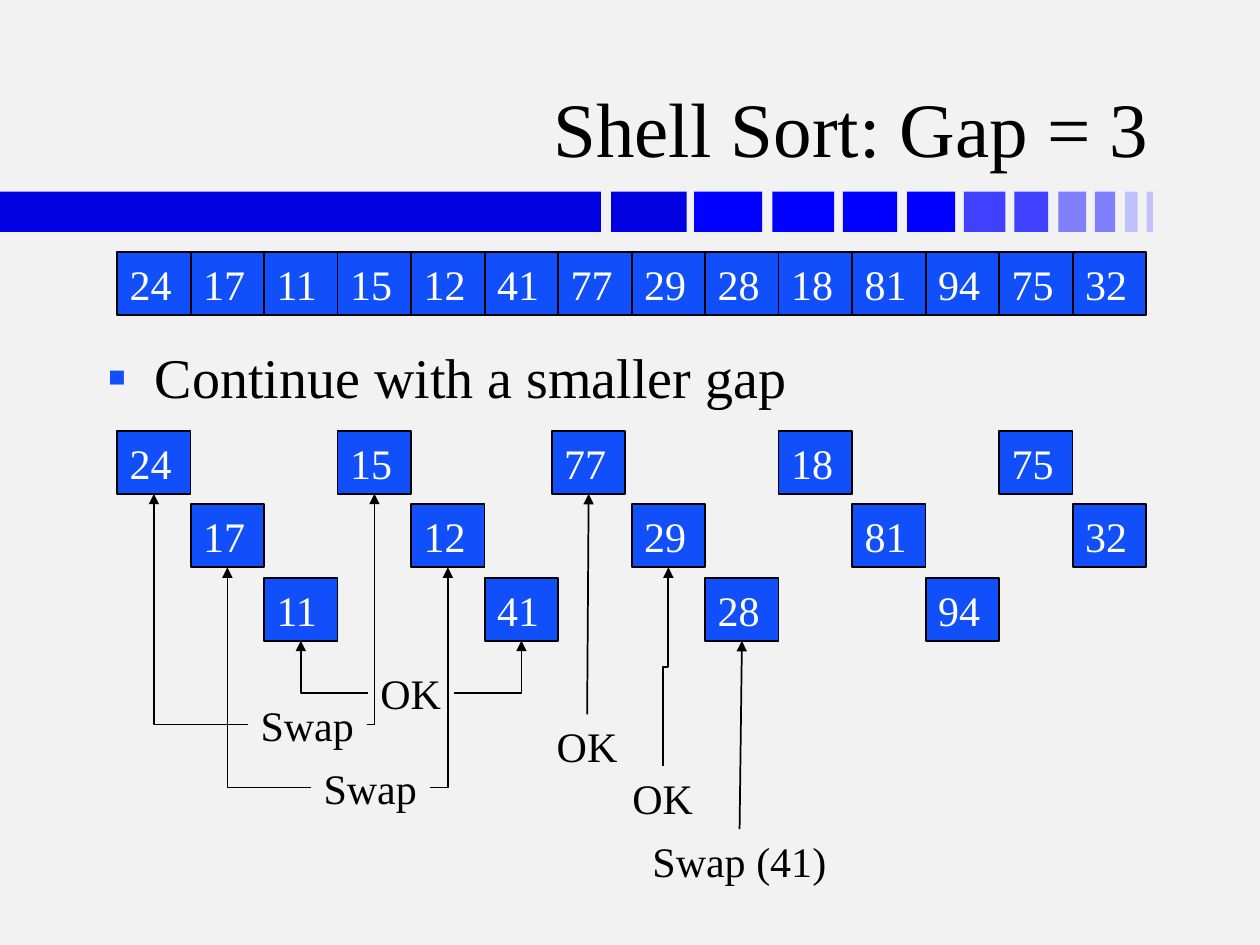
"""Build the Shell Sort slide for the pass with a gap of 3."""
from lxml.etree import SubElement
from pptx import Presentation
from pptx.dml.color import RGBColor
from pptx.enum.shapes import MSO_CONNECTOR as LINK, MSO_SHAPE
from pptx.enum.text import MSO_ANCHOR, MSO_AUTO_SIZE, PP_ALIGN
from pptx.oxml.ns import qn
from pptx.util import Inches, Pt

TITLE = "Shell Sort: Gap = 3"
POINT = "Continue with a smaller gap"
VALUES = [24, 17, 11, 15, 12, 41, 77, 29, 28, 18, 81, 94, 75, 32]
GAP = 3
NUDGES = {77: -0.05}
PAIR_LABELS = [
    ("Swap", 1.97, 5.5, 0.94, 24, 15),
    ("Swap", 2.47, 6, 0.94, 17, 12),
    ("OK", 2.92, 5.25, 0.68, 11, 41),
]
SINGLE_LABELS = [
    ("OK", 4.32, 5.67, 0.68, 77),
    ("OK", 4.92, 6.08, 0.68, 29),
    ("Swap (41)", 5.08, 6.58, 1.58, 28),
]

FONT = "Times New Roman"
BLACK = RGBColor(0x00, 0x00, 0x00)
WHITE = RGBColor(0xFF, 0xFF, 0xFF)
PAPER = RGBColor(0xF2, 0xF2, 0xF2)
CELL_BLUE = RGBColor(0x11, 0x4F, 0xFB)
NAVY = RGBColor(0x00, 0x00, 0xE0)
BLUE = RGBColor(0x00, 0x00, 0xFF)
MID_BLUE = RGBColor(0x40, 0x40, 0xFF)
SOFT_BLUE = RGBColor(0x80, 0x80, 0xFF)
PALE_BLUE = RGBColor(0xC0, 0xC0, 0xFF)
BAND = [
    (0, 4.77, NAVY), (4.85, 0.6, NAVY), (5.51, 0.54, BLUE), (6.13, 0.49, BLUE),
    (6.69, 0.43, BLUE), (7.2, 0.38, BLUE), (7.65, 0.33, MID_BLUE),
    (8.05, 0.27, MID_BLUE), (8.4, 0.22, SOFT_BLUE), (8.69, 0.16, SOFT_BLUE),
    (8.93, 0.1, PALE_BLUE), (9.1, 0.05, PALE_BLUE),
]
BAND_TOP, BAND_HEIGHT = 1.52, 0.32
ARRAY_LEFT, ARRAY_TOP, GROUPS_TOP = 0.93, 2, 3.42
PITCH, CELL_HEIGHT = 7 / 12, 0.5


def write(shape, text, size, color, align=PP_ALIGN.LEFT):
    shape.text_frame.text = text
    paragraph = shape.text_frame.paragraphs[0]
    paragraph.alignment = align
    font = paragraph.runs[0].font
    font.name, font.size, font.color.rgb = FONT, Pt(size), color
    return paragraph


def place(shape, left, top, width, height):
    shape.left, shape.top = Inches(left), Inches(top)
    shape.width, shape.height = Inches(width), Inches(height)


def add_block(slide, left, top, width, height, color):
    block = slide.shapes.add_shape(
        MSO_SHAPE.RECTANGLE, Inches(left), Inches(top), Inches(width), Inches(height))
    block.shadow.inherit = False
    block.fill.solid()
    block.fill.fore_color.rgb = color
    block.line.fill.background()
    return block


def add_cell(slide, value, left, top):
    cell = add_block(slide, left, top, PITCH, CELL_HEIGHT, CELL_BLUE)
    cell.line.color.rgb, cell.line.width = BLACK, Pt(1)
    cell.text_frame.word_wrap = False
    cell.text_frame.vertical_anchor = MSO_ANCHOR.MIDDLE
    write(cell, str(value), 24, WHITE)
    return cell


def add_label(slide, text, left, top, width):
    label = slide.shapes.add_textbox(
        Inches(left), Inches(top), Inches(width), Inches(CELL_HEIGHT))
    label.text_frame.word_wrap = False
    label.text_frame.auto_size = MSO_AUTO_SIZE.SHAPE_TO_FIT_TEXT
    write(label, text, 24, BLACK)
    return label


def add_arrow(slide, kind, begin, end):
    arrow = slide.shapes.add_connector(kind, *begin, *end)
    arrow.line.color.rgb, arrow.line.width = BLACK, Pt(1)
    SubElement(arrow.line._get_or_add_ln(), qn("a:tailEnd"), type="triangle")
    SubElement(arrow._element.spPr, qn("a:effectLst"))
    return arrow


def foot(cell):
    return cell.left + cell.width // 2, cell.top + cell.height


def add_corner_arrow(slide, begin, cell):
    arrow = add_arrow(slide, LINK.ELBOW, begin, foot(cell))
    arrow._element.spPr.prstGeom.set("prst", "bentConnector2")


def add_rising_arrow(slide, label, cell):
    x1, y1 = label.left + label.width // 2, label.top
    x2, y2 = foot(cell)
    if abs(x2 - x1) < Inches(0.02):
        arrow = add_arrow(slide, LINK.STRAIGHT, (x1, y1), (x2, y2))
        arrow.begin_connect(label, 0)
        arrow.end_connect(cell, 2)
        return
    rise, step = y1 - y2, x2 - x1
    left, top = (x1 + x2 - rise) // 2, (y1 + y2 - step) // 2
    arrow = add_arrow(slide, LINK.ELBOW, (left, top), (left + rise, top + step))
    arrow._element.spPr.xfrm.set("rot", str(270 * 60000))


def fill_placeholders(slide):
    title, body = slide.placeholders
    place(title, 0.74, 0.19, 8.48, 1.23)
    title.text_frame.vertical_anchor = MSO_ANCHOR.BOTTOM
    write(title, TITLE, 44, BLACK, PP_ALIGN.RIGHT)
    place(body, 0.75, 2.67, 8.5, 4)
    properties = write(body, POINT, 32, BLACK)._p.get_or_add_pPr()
    properties.set("marL", str(Inches(0.38)))
    properties.set("indent", str(Inches(-0.38)))
    bullet_color = SubElement(properties, qn("a:buClr"))
    SubElement(bullet_color, qn("a:srgbClr"), val=str(CELL_BLUE))
    SubElement(properties, qn("a:buFont"), typeface=FONT)
    SubElement(properties, qn("a:buChar"), char="▪")
    for holder in (title, body):
        holder.text_frame.auto_size = MSO_AUTO_SIZE.NONE


def main():
    deck = Presentation()
    deck.slide_width, deck.slide_height = Inches(10), Inches(7.5)
    slide = deck.slides.add_slide(deck.slide_layouts[1])
    slide.background.fill.solid()
    slide.background.fill.fore_color.rgb = PAPER
    for left, width, color in BAND:
        add_block(slide, left, BAND_TOP, width, BAND_HEIGHT, color)
    fill_placeholders(slide)

    grouped = {}
    for column, value in enumerate(VALUES):
        left = ARRAY_LEFT + column * PITCH
        add_cell(slide, value, left, ARRAY_TOP)
        grouped[value] = add_cell(
            slide, value, left + NUDGES.get(value, 0), GROUPS_TOP + column % GAP * PITCH)

    for text, left, top, width, first, second in PAIR_LABELS:
        label = add_label(slide, text, left, top, width)
        middle = label.top + label.height // 2
        add_corner_arrow(slide, (label.left, middle), grouped[first])
        add_corner_arrow(slide, (label.left + label.width, middle), grouped[second])
    for text, left, top, width, value in SINGLE_LABELS:
        add_rising_arrow(slide, add_label(slide, text, left, top, width), grouped[value])

    deck.save("out.pptx")


if __name__ == "__main__":
    main()
